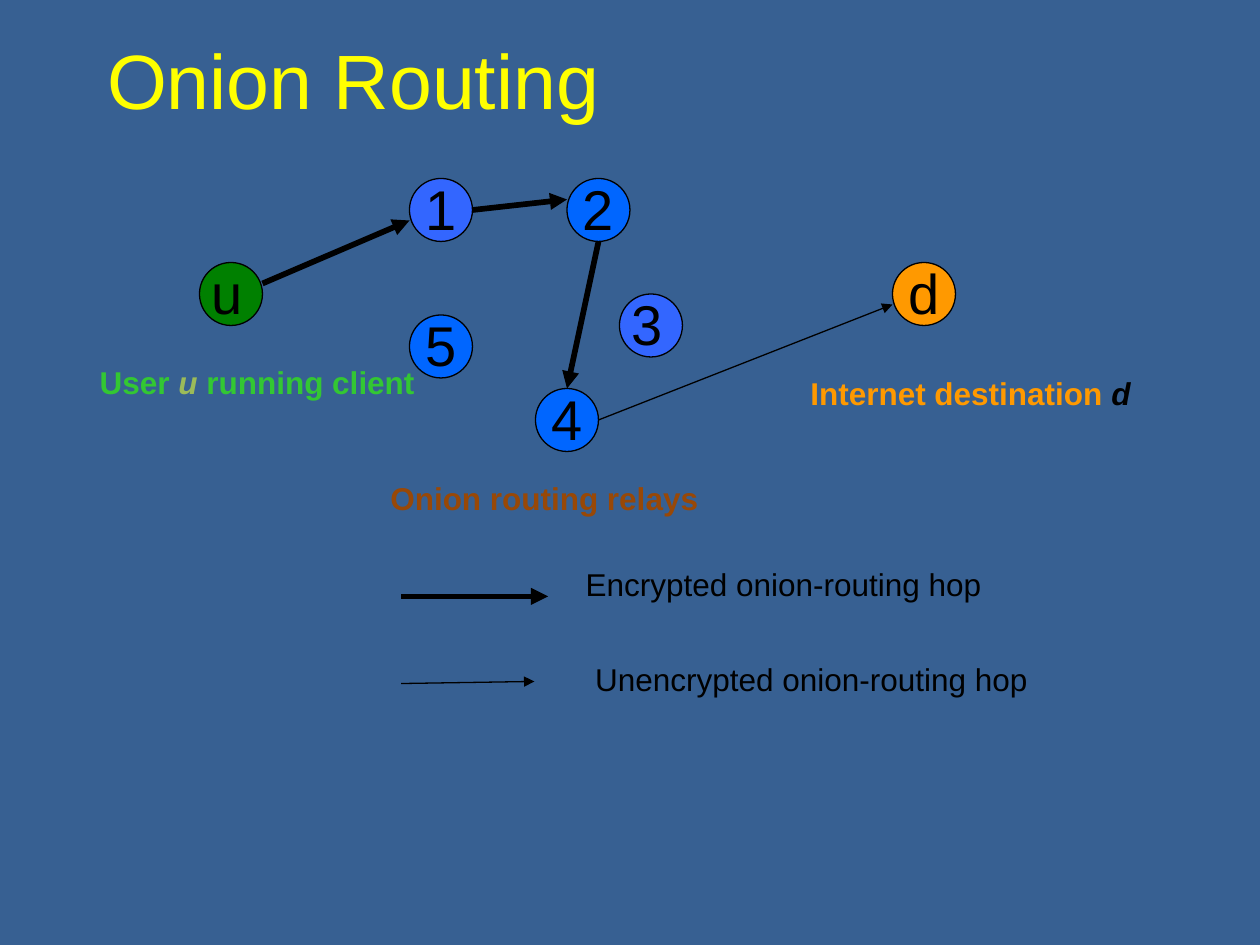
import pptx
import pptx.util
import pptx.dml.color
import pptx.enum.shapes
import pptx.enum.text
import pptx.oxml.ns
import lxml.etree

PX = 7620  # EMU per px, 120 px to the inch
HUES = {
    "back": "376092", "title": "FFFF00", "ink": "000000",
    "pale": "3366FF", "blue": "0066FF", "dest": "FF9900", "user": "008000",
    "lime": "33C733", "olive": "9BBB59", "brown": "984807",
}
ALIGN = pptx.enum.text.PP_ALIGN
LEFT, MID = ALIGN.LEFT, ALIGN.CENTER


def rgb(hue):
    return pptx.dml.color.RGBColor.from_string(HUES[hue])


def node(parent, tag, **attrs):
    return lxml.etree.SubElement(parent, pptx.oxml.ns.qn(tag), attrs)


class Deck:
    """Holds the style and the current slide."""
    face = "Arial"
    thick, thin = 3.25, 0.75

    def __init__(self, wide, high):
        self.prs = pptx.Presentation()
        self.prs.slide_width = wide * PX
        self.prs.slide_height = high * PX

    def page(self, hue):
        self.slide = self.prs.slides.add_slide(self.prs.slide_layouts[5])
        self.slide.background.fill.solid()
        self.slide.background.fill.fore_color.rgb = rgb(hue)

    def font(self, run, size, hue, bold=False, slant=False):
        font = run.font
        font.name, font.size = self.face, pptx.util.Pt(size)
        font.bold, font.italic = bold, slant
        font.color.rgb = rgb(hue)

    def title(self, text, x, y, w, h):
        box = self.slide.shapes.title
        box.left, box.top, box.width, box.height = (n * PX for n in (x, y, w, h))
        frame = box.text_frame
        frame.text = text
        frame.auto_size = pptx.enum.text.MSO_AUTO_SIZE.NONE
        frame.vertical_anchor = pptx.enum.text.MSO_ANCHOR.MIDDLE
        frame.paragraphs[0].alignment = LEFT
        self.font(frame.paragraphs[0].runs[0], 44, "title")

    def disc(self, x, y, size, hue):
        oval = pptx.enum.shapes.MSO_SHAPE.OVAL
        disc = self.slide.shapes.add_shape(oval, x * PX, y * PX, size * PX, size * PX)
        disc.shadow.inherit = False
        disc.fill.solid()
        disc.fill.fore_color.rgb = rgb(hue)
        disc.line.color.rgb = rgb("ink")
        disc.line.width = pptx.util.Pt(self.thin)

    def text(self, x, y, w, h, runs, size=18, bold=False, align=LEFT, gap=True):
        """Each run is (text, hue) or (text, hue, slant)."""
        box = self.slide.shapes.add_textbox(x * PX, y * PX, w * PX, h * PX)
        frame = box.text_frame
        frame.word_wrap = True
        frame.auto_size = pptx.enum.text.MSO_AUTO_SIZE.SHAPE_TO_FIT_TEXT
        para = frame.paragraphs[0]
        para.alignment = align
        if gap:  # half a line before the paragraph
            space = node(para._p.get_or_add_pPr(), "a:spcBef")
            node(space, "a:spcPct", val="50000")
        for words, hue, *slant in runs:
            run = para.add_run()
            run.text = words
            self.font(run, size, hue, bold, bool(slant))

    def arrow(self, x1, y1, x2, y2, width):
        kind = pptx.enum.shapes.MSO_CONNECTOR.STRAIGHT
        line = self.slide.shapes.add_connector(kind, x1 * PX, y1 * PX, x2 * PX, y2 * PX)
        line.line.color.rgb = rgb("ink")
        line.line.width = pptx.util.Pt(width)
        node(line.line._get_or_add_ln(), "a:tailEnd", type="triangle")
        node(line._element.spPr, "a:effectLst")


def main():
    deck = Deck(1200, 900)
    deck.page("back")
    deck.title("Onion Routing", 90, 0, 1020, 150)

    # Nodes: name, left, top, fill, label width, label alignment
    size = 60
    nodes = [
        ("1", 390, 170, "pale", size, MID),
        ("2", 540, 170, "blue", size, MID),
        ("5", 390, 300, "blue", size, MID),
        ("3", 590, 280, "pale", 50, MID),
        ("4", 510, 370, "blue", size, MID),
        ("d", 850, 250, "dest", size, MID),
        ("u", 190, 250, "user", size, LEFT),
    ]
    for name, x, y, hue, wide, align in nodes:
        deck.disc(x, y, size, hue)
        deck.text(x, y - 10, wide, 76, [(name, "ink")], size=32, align=align)

    # Hops along the route, then the two in the key
    for hop in [
        (250, 270, 390, 210, deck.thick),
        (450, 200, 540, 190, deck.thick),
        (570, 230, 540, 370, deck.thick),
        (570, 400, 850, 290, deck.thin),
        (382, 568, 522, 568, deck.thick),
        (382, 651, 509, 649, deck.thin),
    ]:
        deck.arrow(*hop)

    # Captions
    user = [("User ", "lime"), ("u", "olive", True), (" running client", "lime")]
    dest = [("Internet destination ", "dest"), ("d", "ink", True)]
    deck.text(0, 340, 490, 48, user, bold=True, align=MID)
    deck.text(760, 350, 410, 48, dest, bold=True)
    deck.text(360, 450, 530, 48, [("Onion routing relays", "brown")], bold=True)

    # Key
    deck.text(546, 532, 481, 47, [("Encrypted onion-routing hop", "ink")], gap=False)
    deck.text(555, 623, 481, 47, [("Unencrypted onion-routing hop", "ink")], gap=False)

    deck.prs.save("out.pptx")


if __name__ == "__main__":
    main()
